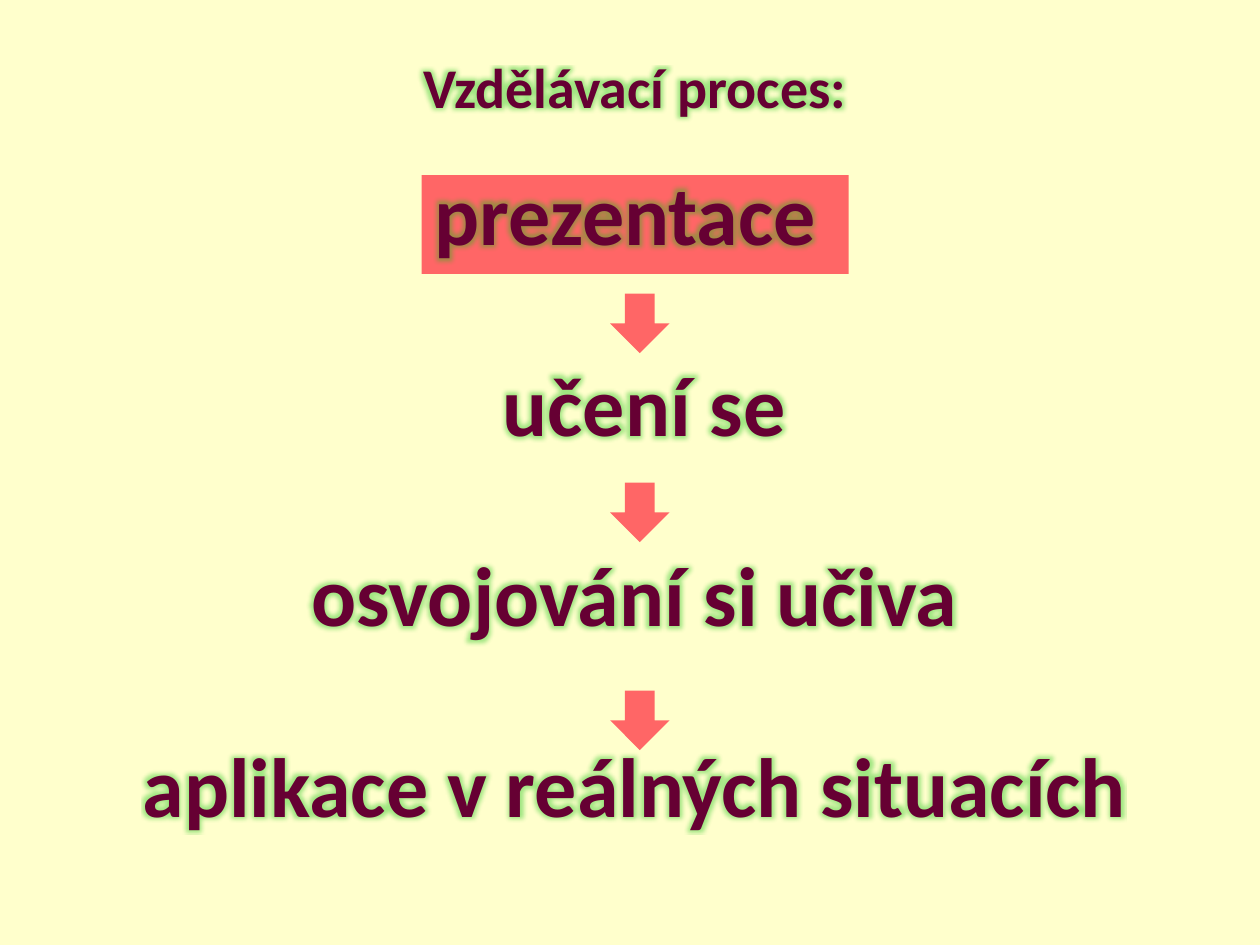
import pptx
import pptx.dml.color
import pptx.enum.shapes
import pptx.enum.text
import pptx.oxml
import pptx.oxml.ns
import pptx.util

Pt = pptx.util.Pt
RGBColor = pptx.dml.color.RGBColor
Shape = pptx.enum.shapes.MSO_SHAPE

CREAM = RGBColor(0xFF, 0xFF, 0xCC)
CORAL = RGBColor(0xFF, 0x66, 0x66)
MAROON = RGBColor(0x66, 0x00, 0x33)
GREEN = RGBColor(0x10, 0xC0, 0x10)

STEPS = [
    ("Vzdělávací proces:", 32, 1, 0),
    ("prezentace ", 48, 1, 24),
    (" učení se", 48, 1.5, 22.5),
    (" osvojování si učiva ", 48, 1.5, 22.5),
    ("aplikace v reálných situacích", 48, 1.5, 22.5),
]
ARROW_TOPS = [167.8, 275.8, 394.6]


class SlideBuilder:
    font_name = "Calibri"
    glow_radius = Pt(5)
    glow_opacity = 40

    def __init__(self, presentation):
        self.slide = presentation.slides.add_slide(presentation.slide_layouts[6])
        background = self.slide.background.fill
        background.solid()
        background.fore_color.rgb = CREAM

    def add_block(self, kind, left, top, width, height):
        shape = self.slide.shapes.add_shape(
            kind, Pt(left), Pt(top), Pt(width), Pt(height)
        )
        shape.shadow.inherit = False
        shape.fill.solid()
        shape.fill.fore_color.rgb = CORAL
        shape.line.fill.background()

    def add_glow(self, run):
        effects = pptx.oxml.parse_xml(
            f'<a:effectLst {pptx.oxml.ns.nsdecls("a")}>'
            f'<a:glow rad="{self.glow_radius}"><a:srgbClr val="{GREEN}">'
            f'<a:alpha val="{self.glow_opacity * 1000}"/>'
            "</a:srgbClr></a:glow></a:effectLst>"
        )
        properties = run.font._element
        properties.find(pptx.oxml.ns.qn("a:latin")).addprevious(effects)

    def add_steps(self, steps, left, top, width, height):
        box = self.slide.shapes.add_textbox(Pt(left), Pt(top), Pt(width), Pt(height))
        frame = box.text_frame
        frame.word_wrap = True
        for index, (text, size, line_spacing, space_before) in enumerate(steps):
            paragraph = frame.add_paragraph() if index else frame.paragraphs[0]
            paragraph.alignment = pptx.enum.text.PP_ALIGN.CENTER
            paragraph.line_spacing = line_spacing
            paragraph.space_before = Pt(space_before)
            run = paragraph.add_run()
            run.text = text
            run.font.name = self.font_name
            run.font.size = Pt(size)
            run.font.bold = True
            run.font.color.rgb = MAROON
            self.add_glow(run)


def main():
    presentation = pptx.Presentation()
    presentation.slide_width = Pt(720)
    presentation.slide_height = Pt(540)

    builder = SlideBuilder(presentation)
    builder.add_block(Shape.RECTANGLE, 241, 100, 244, 56.5)
    builder.add_steps(STEPS, 36.5, 26.5, 652.5, 482)
    for top in ARROW_TOPS:
        builder.add_block(Shape.DOWN_ARROW, 348.6, top, 34, 34)

    presentation.save("out.pptx")


if __name__ == "__main__":
    main()
